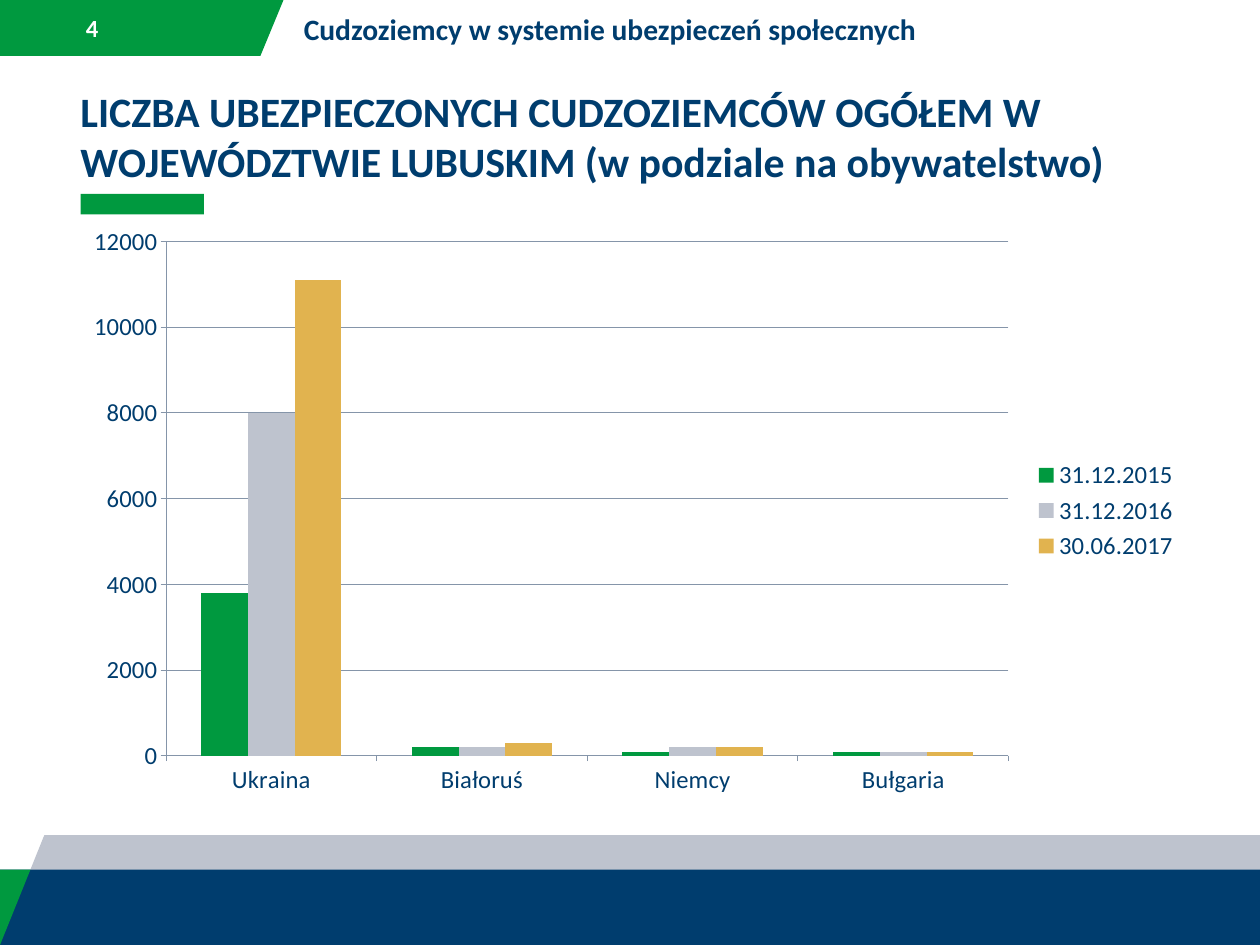
from lxml.etree import SubElement
from pptx import Presentation
from pptx.chart.data import CategoryChartData
from pptx.dml.color import RGBColor
from pptx.enum.chart import XL_CHART_TYPE, XL_LEGEND_POSITION, XL_TICK_MARK
from pptx.enum.shapes import MSO_SHAPE
from pptx.enum.text import MSO_ANCHOR
from pptx.oxml.ns import qn
from pptx.util import Inches, Pt

WIDTH, HEIGHT = 14.22, 10.67
FONT = "Calibri"
COLORS = {
    "green": "00993F",
    "gray": "BEC3CE",
    "navy": "003D6E",
    "gold": "E1B34F",
    "axis": "8595A9",
    "white": "FFFFFF",
}


def color(name):
    return RGBColor.from_string(COLORS[name])


def paint(shape, fill):
    shape.shadow.inherit = False
    shape.fill.solid()
    shape.fill.fore_color.rgb = color(fill)
    shape.line.fill.background()


def add_rectangle(slide, box, fill):
    shape = slide.shapes.add_shape(MSO_SHAPE.RECTANGLE, *map(Inches, box))
    paint(shape, fill)


def add_polygon(slide, left, top, points, fill):
    corners = [(Inches(left + x), Inches(top + y)) for x, y in points]
    builder = slide.shapes.build_freeform(*corners[0])
    builder.add_line_segments(corners[1:])
    paint(builder.convert_to_shape(), fill)


def add_text(slide, box, text, size, fill="navy", anchor=MSO_ANCHOR.TOP):
    text_frame = slide.shapes.add_textbox(*map(Inches, box)).text_frame
    text_frame.word_wrap = True
    text_frame.vertical_anchor = anchor
    text_frame.text = text
    font = text_frame.paragraphs[0].runs[0].font
    font.name, font.size, font.bold = FONT, Pt(size), True
    font.color.rgb = color(fill)


def add_header(slide, left, top, width, height):
    tab_width, slant = 3.2, 0.26
    tab = [(0, 0), (tab_width, 0), (tab_width - slant, height), (0, height)]
    add_polygon(slide, left, top, tab, "green")
    add_text(slide, (left + 0.87, top + 0.09, 0.85, 0.45), "4", 20, "white", MSO_ANCHOR.MIDDLE)
    add_text(slide, (left + 3.33, top + 0.08, width - 4.14, 0.6),
             "Cudzoziemcy w systemie ubezpieczeń społecznych", 24)


def add_title(slide, left, top, width, height):
    add_text(slide, (left, top, width, height),
             "LICZBA UBEZPIECZONYCH CUDZOZIEMCÓW OGÓŁEM W "
             "WOJEWÓDZTWIE LUBUSKIM (w podziale na obywatelstwo)", 34)
    add_rectangle(slide, (left + 0.1, top + height, 1.39, 0.23), "green")


def add_footer(slide, left, top, width, height):
    band = 0.39
    slant = 0.5
    corner = slant * (height - band) / height
    add_polygon(slide, left, top, [(slant, 0), (width, 0), (width, height), (0, height)], "gray")
    add_rectangle(slide, (left, top + band, width, height - band), "navy")
    add_polygon(slide, left, top + band, [(0, 0), (corner, 0), (0, height - band)], "green")


def add_insured_chart(slide, left, top, width, height):
    data = CategoryChartData(number_format="General")
    data.categories = ["Ukraina", "Białoruś", "Niemcy", "Bułgaria"]
    data.add_series("31.12.2015", (3800, 200, 100, 100))
    data.add_series("31.12.2016", (8000, 200, 200, 100))
    data.add_series("30.06.2017", (11100, 300, 200, 100))
    box = map(Inches, (left, top, width, height))
    chart = slide.shapes.add_chart(XL_CHART_TYPE.COLUMN_CLUSTERED, *box, data).chart
    chart.has_title = False
    chart.font.name, chart.font.size = FONT, Pt(20)
    chart.font.color.rgb = color("navy")
    chart.has_legend = True
    chart.legend.position = XL_LEGEND_POSITION.RIGHT
    chart.legend.include_in_layout = False

    plot = chart.plots[0]
    plot.gap_width, plot.overlap = 150, 0
    plot.vary_by_categories = False
    for series, fill in zip(plot.series, ("green", "gray", "gold")):
        series.format.fill.solid()
        series.format.fill.fore_color.rgb = color(fill)

    value_axis = chart.value_axis
    value_axis.minimum_scale, value_axis.maximum_scale = 0, 12000
    value_axis.major_unit = 2000
    value_axis.has_major_gridlines = True
    for axis in (chart.category_axis, value_axis):
        axis.major_tick_mark = XL_TICK_MARK.OUTSIDE
    for part in (chart.category_axis, value_axis, value_axis.major_gridlines):
        part.format.line.color.rgb = color("axis")
        part.format.line.width = Pt(0.75)


def main():
    presentation = Presentation()
    presentation.slide_width = Inches(WIDTH)
    presentation.slide_height = Inches(HEIGHT)
    slide = presentation.slides.add_slide(presentation.slide_layouts[6])
    add_header(slide, 0, 0, WIDTH, 0.63)
    add_footer(slide, 0, 9.43, WIDTH, HEIGHT - 9.43)
    add_title(slide, 0.81, 0.92, 12.6, 1.27)
    add_insured_chart(slide, 0.81, 2.42, 12.6, 6.69)
    presentation.save("out.pptx")


if __name__ == "__main__":
    main()
